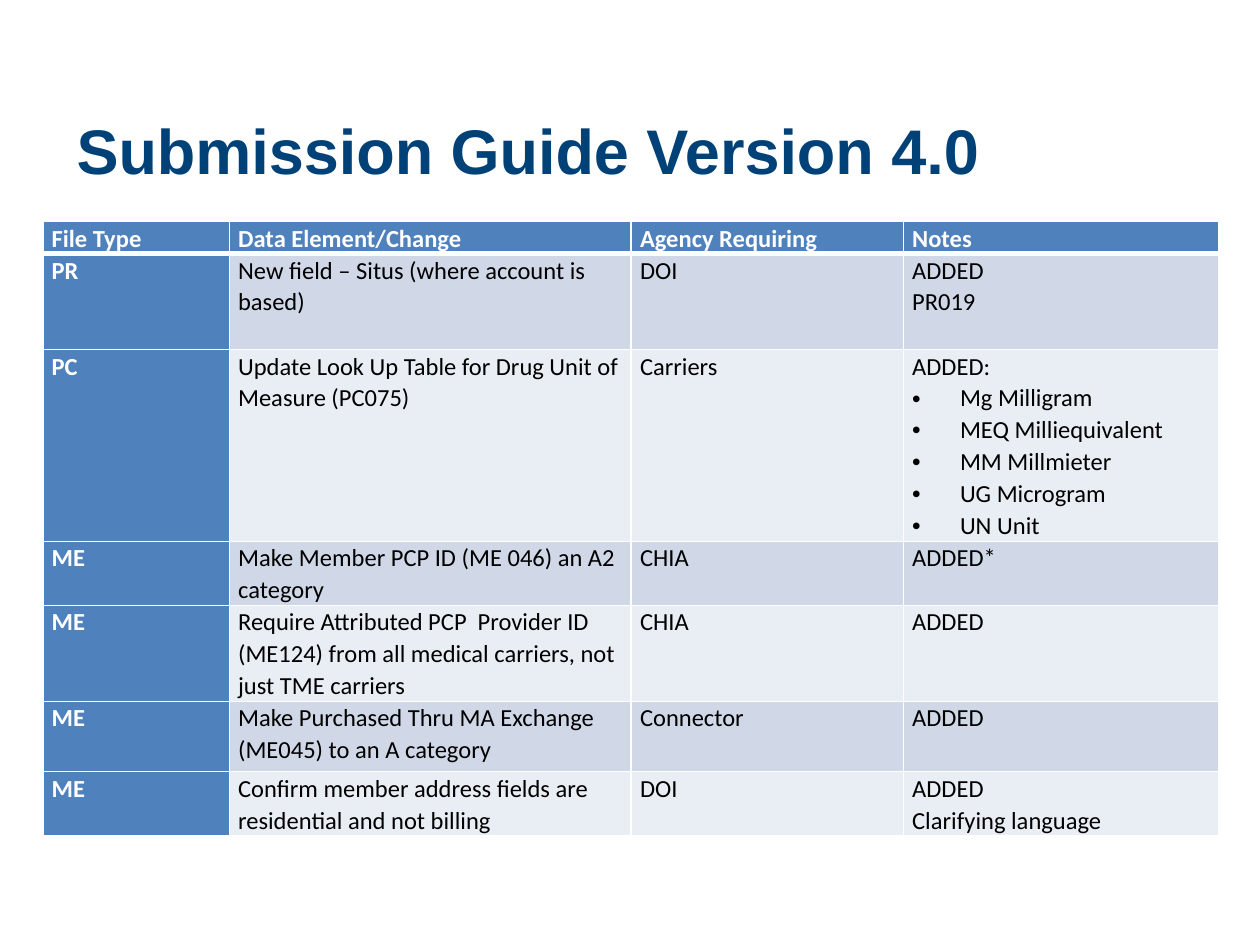
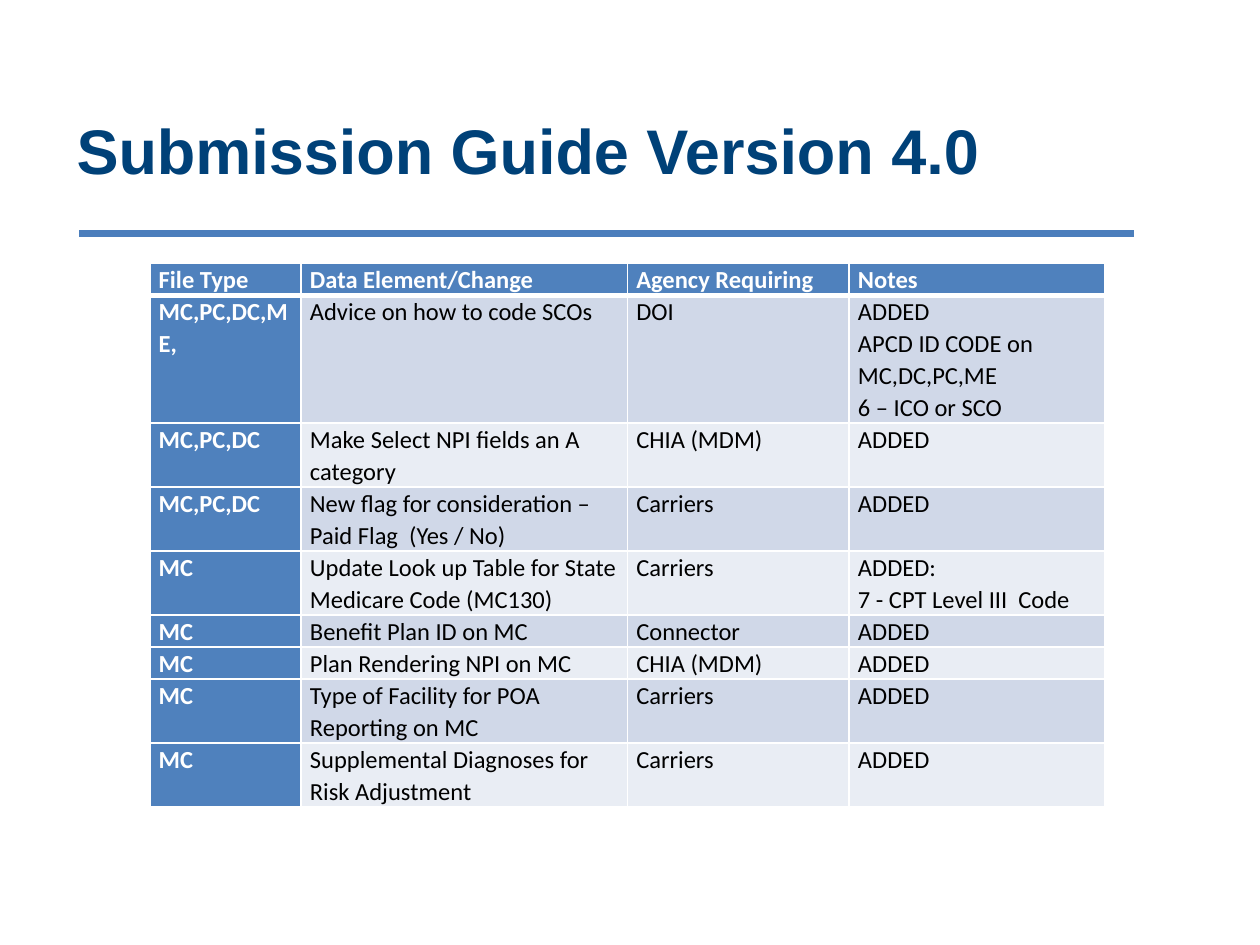
from dataclasses import dataclass

from lxml import etree
from pptx import Presentation
from pptx.dml.color import RGBColor
from pptx.enum.shapes import MSO_CONNECTOR
from pptx.enum.text import MSO_ANCHOR
from pptx.oxml.ns import qn
from pptx.util import Inches, Pt

STRAIGHT = MSO_CONNECTOR.STRAIGHT
MIDDLE = MSO_ANCHOR.MIDDLE
BLANK_LAYOUT = 6


@dataclass(frozen=True)
class Theme:
    title_color: str = "004178"
    rule_color: str = "4B7EBC"
    header_fill: str = "4F81BD"
    band_fills: tuple = ("D0D8E8", "E9EDF4")
    white: str = "FFFFFF"
    black: str = "000000"
    title_font: str = "Arial"
    table_font: str = "Calibri"
    title_size: int = 36
    table_size: int = 14
    rule_width: int = 4
    grid_width: int = 1
    header_line_width: int = 3
    line_spacing: float = 1.07
    font_height: float = 1.22
    cell_inset: float = 0.07
    bullet_indent: float = 0.38

    @property
    def line_height(self):
        """Height of one line of table text, in inches."""
        return self.table_size * self.line_spacing * self.font_height / 72


THEME = Theme()
TITLE = "Submission Guide Version 4.0"
HEADERS = ("File Type", "Data Element/Change", "Agency Requiring", "Notes")
BULLET = "• "

# Each row: height in text lines, then one text per column.
MEMBER_CHANGES = [
    (3, "PR", "New field – Situs (where account is based)", "DOI", "ADDED\nPR019"),
    (6, "PC", "Update Look Up Table for Drug Unit of Measure (PC075)", "Carriers",
     "ADDED:\n• Mg Milligram\n• MEQ Milliequivalent\n• MM Millmieter\n• UG Microgram\n• UN Unit"),
    (2, "ME", "Make Member PCP ID (ME 046) an A2 category", "CHIA", "ADDED*"),
    (3, "ME", "Require Attributed PCP  Provider ID (ME124) from all medical carriers, "
     "not just TME carriers", "CHIA", "ADDED"),
    (2.2, "ME", "Make Purchased Thru MA Exchange (ME045) to an A category",
     "Connector", "ADDED"),
    (2, "ME", "Confirm member address fields are residential and not billing", "DOI",
     "ADDED\nClarifying language"),
]
CLAIM_CHANGES = [
    (4, "MC,PC,DC,ME,", "Advice on how to code SCOs", "DOI",
     "ADDED\nAPCD ID CODE on MC,DC,PC,ME\n6 – ICO or SCO"),
    (2, "MC,PC,DC", "Make Select NPI fields an A category", "CHIA (MDM)", "ADDED"),
    (2, "MC,PC,DC", "New flag for consideration – Paid Flag  (Yes / No)", "Carriers", "ADDED"),
    (2, "MC", "Update Look up Table for State Medicare Code (MC130)", "Carriers",
     "ADDED:\n7 - CPT Level III  Code"),
    (1, "MC", "Benefit Plan ID on MC", "Connector", "ADDED"),
    (1, "MC", "Plan Rendering NPI on MC", "CHIA (MDM)", "ADDED"),
    (2, "MC", "Type of Facility for POA Reporting on MC", "Carriers", "ADDED"),
    (2, "MC", "Supplemental Diagnoses for Risk Adjustment", "Carriers", "ADDED"),
]


def add_span(para, text, color, **font_values):
    span = para.add_run()
    span.text = text
    span.font.color.rgb = RGBColor.from_string(color)
    for name, value in font_values.items():
        setattr(span.font, name, value)


def add_title(page, text):
    box = page.shapes.add_textbox(Inches(0.51), Inches(0.63), Inches(8.5), Inches(1.11))
    frame = box.text_frame
    frame.word_wrap = True
    frame.vertical_anchor = MIDDLE
    add_span(frame.paragraphs[0], text, THEME.title_color, name=THEME.title_font,
             size=Pt(THEME.title_size), bold=True)


def add_title_rule(page):
    rule = page.shapes.add_connector(STRAIGHT, Inches(0.63), Inches(1.85), Inches(9), Inches(1.85))
    rule.line.color.rgb = RGBColor.from_string(THEME.rule_color)
    rule.line.width = Pt(THEME.rule_width)
    etree.SubElement(rule.element.spPr, qn("a:effectLst"))


def set_borders(cell, widths):
    """Draw white cell borders; widths maps a side (L, R, T, B) to points."""
    properties = cell._tc.get_or_add_tcPr()
    for side, width in widths.items():
        line = etree.SubElement(properties, qn(f"a:ln{side}"), w=str(Pt(width)))
        fill = etree.SubElement(line, qn("a:solidFill"))
        etree.SubElement(fill, qn("a:srgbClr"), val=THEME.white)


def make_bullet(para):
    properties = para._p.get_or_add_pPr()
    indent = Inches(THEME.bullet_indent)
    properties.set("marL", str(indent))
    properties.set("indent", str(-indent))
    etree.SubElement(properties, qn("a:buFont"), typeface="Arial")
    etree.SubElement(properties, qn("a:buChar"), char=BULLET.strip())


def write_cell(cell, text, color, bold):
    inset = Inches(THEME.cell_inset)
    margins = {"margin_left": inset, "margin_right": inset, "margin_top": 0, "margin_bottom": 0}
    for name, value in margins.items():
        setattr(cell, name, value)
    frame = cell.text_frame
    for index, line in enumerate(text.split("\n")):
        para = frame.add_paragraph() if index else frame.paragraphs[0]
        if line.startswith(BULLET):
            make_bullet(para)
        para.line_spacing = THEME.line_spacing
        add_span(para, line.removeprefix(BULLET), color, name=THEME.table_font,
                 size=Pt(THEME.table_size), bold=bold)


def add_change_table(page, left, top, column_widths, changes):
    rows = [(1, *HEADERS), *changes]
    height = sum(row[0] for row in rows) * THEME.line_height
    table = page.shapes.add_table(len(rows), len(HEADERS), Inches(left), Inches(top),
                                  Inches(sum(column_widths)), Inches(height)).table
    for column, width in zip(table.columns, column_widths):
        column.width = Inches(width)
    for row_index, (line_count, *texts) in enumerate(rows):
        table.rows[row_index].height = Inches(line_count * THEME.line_height)
        borders = dict.fromkeys("LRTB", THEME.grid_width)
        if row_index < 2:
            borders["T" if row_index else "B"] = THEME.header_line_width
        for column_index, text in enumerate(texts):
            cell = table.cell(row_index, column_index)
            is_heading = row_index == 0 or column_index == 0
            set_borders(cell, borders)
            cell.fill.solid()
            cell.fill.fore_color.rgb = RGBColor.from_string(
                THEME.header_fill if is_heading else THEME.band_fills[(row_index - 1) % 2])
            write_cell(cell, text, THEME.white if is_heading else THEME.black, is_heading)


def add_page(deck):
    page = deck.slides.add_slide(deck.slide_layouts[BLANK_LAYOUT])
    add_title_rule(page)
    add_title(page, TITLE)
    return page


def main():
    deck = Presentation()
    deck.slide_width, deck.slide_height = Inches(10), Inches(7.5)

    member_page = add_page(deck)
    add_change_table(member_page, 0.34, 1.76, (1.48, 3.19, 2.16, 2.5), MEMBER_CHANGES)

    claim_page = add_page(deck)
    add_change_table(claim_page, 1.19, 2.09, (1.2, 2.59, 1.76, 2.03), CLAIM_CHANGES)

    deck.save("out.pptx")


if __name__ == "__main__":
    main()
